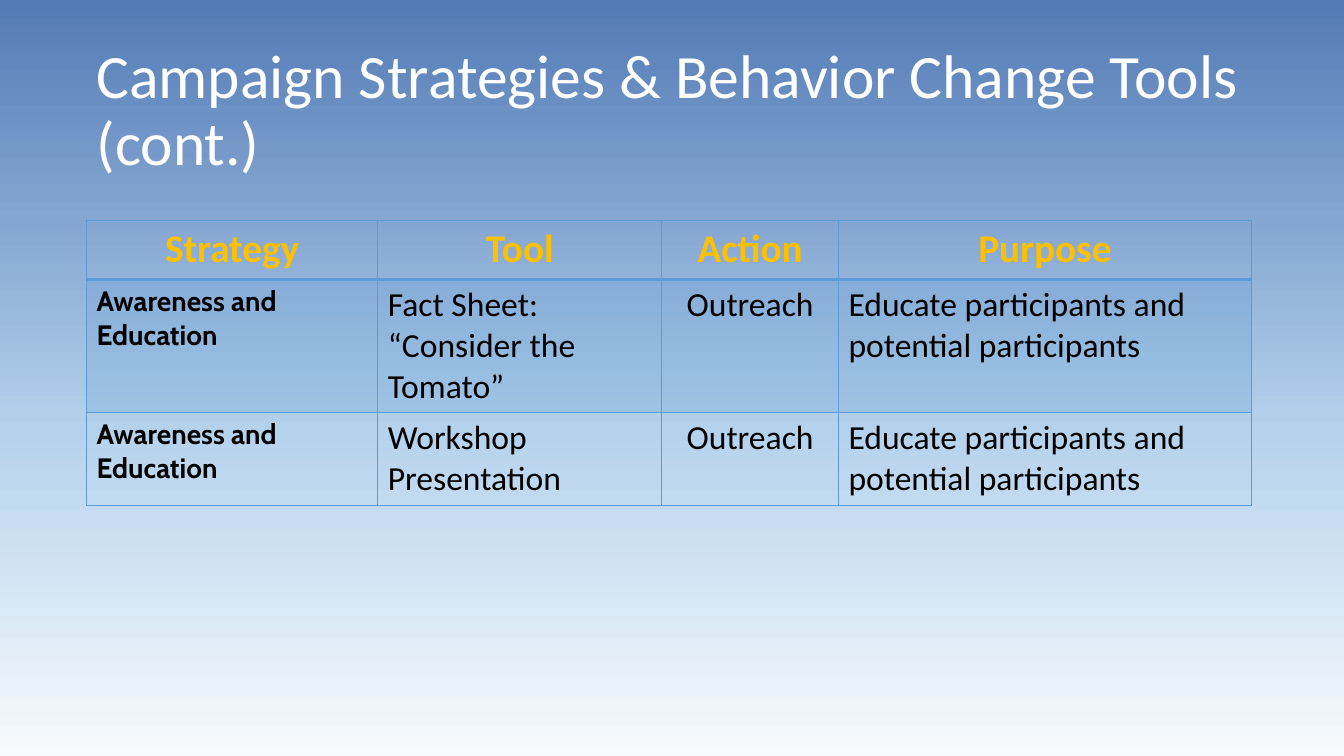
from dataclasses import dataclass

from lxml import etree
from pptx import Presentation
from pptx.dml.color import RGBColor
from pptx.enum.text import MSO_ANCHOR, PP_ALIGN
from pptx.oxml.ns import qn
from pptx.util import Cm, Pt

LEFT, CENTER = PP_ALIGN.LEFT, PP_ALIGN.CENTER
TOP = MSO_ANCHOR.TOP


@dataclass(frozen=True)
class Theme:
    white: str = "FFFFFF"
    gold: str = "FFC000"
    black: str = "000000"
    blue: str = "5B9BD5"
    sky: tuple = ((0, "537BB6"), (29, "84A6D1"), (57, "B5D2EC"), (100, "F7FAFD"))
    body_font: str = "Calibri"
    strategy_font: str = "Cabin"
    title_size: int = 44
    header_size: int = 28
    body_size: int = 24
    strategy_size: int = 20


theme = Theme()


def write_lines(frame, lines, font, size, color, bold=False, align=LEFT, spacing=1.0):
    for index, line in enumerate(lines):
        para = frame.paragraphs[0] if index == 0 else frame.add_paragraph()
        para.alignment = align
        para.line_spacing = spacing
        span = para.add_run()
        span.text = line
        span.font.name = font
        span.font.size = Pt(size)
        span.font.bold = bold
        span.font.color.rgb = RGBColor.from_string(color)


def add_border(cell, side, width):
    line = etree.SubElement(cell._tc.get_or_add_tcPr(), qn(f"a:ln{side}"), w=str(Pt(width)))
    solid = etree.SubElement(line, qn("a:solidFill"))
    etree.SubElement(solid, qn("a:srgbClr"), val=theme.blue)


deck = Presentation()
deck.slide_width, deck.slide_height = Cm(33.87), Cm(19.05)
page = deck.slides.add_slide(deck.slide_layouts[6])

# Background gradient, top to bottom
sky = page.background.fill
sky.gradient()
sky.gradient_angle = 270
stops = page.background._cSld.find(".//" + qn("a:gsLst"))
for stop in list(stops):
    stops.remove(stop)
for percent, color in theme.sky:
    stop = etree.SubElement(stops, qn("a:gs"), pos=str(percent * 1000))
    etree.SubElement(stop, qn("a:srgbClr"), val=color)

# Title
title = page.shapes.add_textbox(Cm(2.18), Cm(1.02), Cm(29.34), Cm(3.91)).text_frame
title.word_wrap = True
title.vertical_anchor = TOP
write_lines(title, ["Campaign Strategies & Behavior Change Tools", "(cont.)"],
            theme.body_font, theme.title_size, theme.white, spacing=0.9)

# Strategy table
strategy = ["Awareness and", "Education"]
purpose = ["Educate participants and potential participants"]
rows = [
    [["Strategy"], ["Tool"], ["Action"], ["Purpose"]],
    [strategy, ["Fact Sheet:", "“Consider the", "Tomato”"], ["Outreach"], purpose],
    [strategy, ["Workshop", "Presentation"], ["Outreach"], purpose],
]
column_widths = [7.34, 7.16, 4.45, 10.41]
row_heights = [1.48, 3.36, 2.34]
table = page.shapes.add_table(len(rows), len(column_widths), Cm(2.18), Cm(5.56),
                              Cm(sum(column_widths)), Cm(sum(row_heights))).table
table.first_row = False
table.horz_banding = False
for column, width in zip(table.columns, column_widths):
    column.width = Cm(width)

for row_index, row in enumerate(rows):
    table.rows[row_index].height = Cm(row_heights[row_index])
    for column_index, lines in enumerate(row):
        cell = table.cell(row_index, column_index)
        is_header = row_index == 0
        is_strategy = column_index == 0

        # Borders, heavier under the header
        for side in "LRTB":
            under_header = (row_index, side) in ((0, "B"), (1, "T"))
            add_border(cell, side, 2 if under_header else 1)

        # Tint on the first body row
        if row_index == 1:
            cell.fill.solid()
            cell.fill.fore_color.rgb = RGBColor.from_string(theme.blue)
            tint = cell._tc.tcPr.find(qn("a:solidFill")).find(qn("a:srgbClr"))
            etree.SubElement(tint, qn("a:alpha"), val="20000")
        else:
            cell.fill.background()

        if is_header:
            write_lines(cell.text_frame, lines, theme.body_font, theme.header_size,
                        theme.gold, bold=True, align=CENTER)
        elif is_strategy:
            write_lines(cell.text_frame, lines, theme.strategy_font, theme.strategy_size,
                        theme.black, bold=True)
        else:
            write_lines(cell.text_frame, lines, theme.body_font, theme.body_size,
                        theme.black, align=CENTER if column_index == 2 else LEFT)

deck.save("out.pptx")
